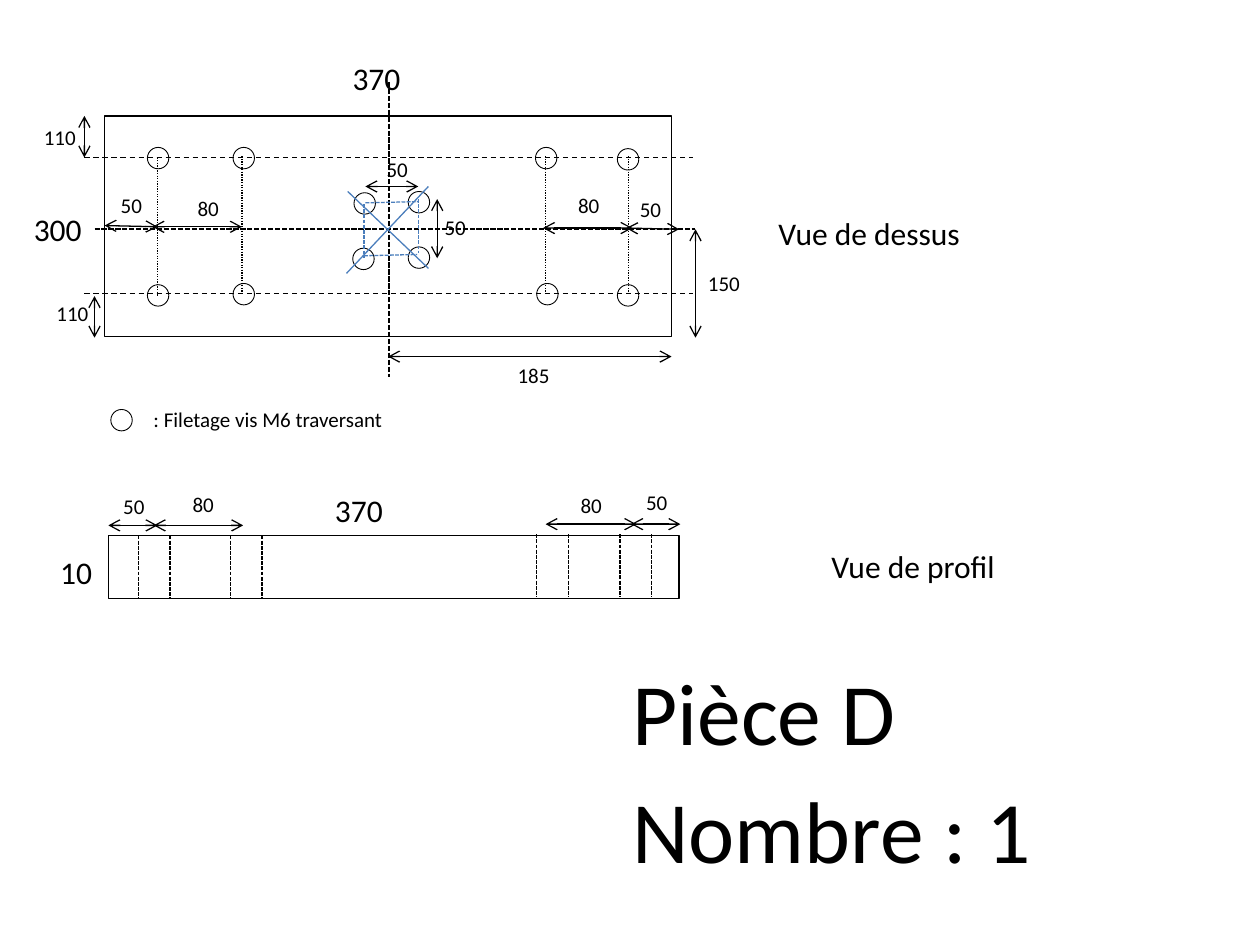
import lxml.etree
import pptx
import pptx.dml.color
import pptx.enum.dml
import pptx.enum.shapes
import pptx.oxml.ns
import pptx.util

Inches = pptx.util.Inches
Pt = pptx.util.Pt
qn = pptx.oxml.ns.qn
Dash = pptx.enum.dml.MSO_LINE
Preset = pptx.enum.shapes.MSO_SHAPE

THEME = {
    "font": "Calibri",
    "ink": pptx.dml.color.RGBColor(0x00, 0x00, 0x00),
    "blue": pptx.dml.color.RGBColor(0x4B, 0x7E, 0xBC),
    "dimension": 12,
    "heading": 18,
    "title": 50,
    "hole_line": 0.5,
    "line": 0.75,
    "centre_line": 1,
}


def draw_line(x1, y1, x2, y2, color="ink", width="line", dash=None, arrows=False):
    connector = slide.shapes.add_connector(
        pptx.enum.shapes.MSO_CONNECTOR.STRAIGHT,
        Inches(x1), Inches(y1), Inches(x2), Inches(y2))
    connector.line.color.rgb = THEME[color]
    connector.line.width = Pt(THEME[width])
    if dash is not None:
        connector.line.dash_style = dash
    if arrows:
        for end in ("a:headEnd", "a:tailEnd"):
            lxml.etree.SubElement(connector.line._get_or_add_ln(), qn(end), type="arrow")
    lxml.etree.SubElement(connector._element.spPr, qn("a:effectLst"))


def draw_outline(preset, left, top, width, height, line_width):
    outline = slide.shapes.add_shape(
        preset, Inches(left), Inches(top), Inches(width), Inches(height))
    outline.shadow.inherit = False
    outline.fill.background()
    outline.line.color.rgb = THEME["ink"]
    outline.line.width = Pt(THEME[line_width])


deck = pptx.Presentation()
deck.slide_width = Inches(10)
deck.slide_height = Inches(7.5)
slide = deck.slides.add_slide(deck.slide_layouts[6])

plate_views = [(0.83, 0.92, 4.5, 1.75), (0.86, 4.25, 4.53, 0.5)]
for left, top, width, height in plate_views:
    draw_outline(Preset.RECTANGLE, left, top, width, height, "line")

for row_y in (1.25, 2.33):
    draw_line(0.67, row_y, 5.5, row_y, dash=Dash.DASH)
draw_line(3.09, 0.65, 3.09, 2.99, width="centre_line", dash=Dash.SQUARE_DOT)
draw_line(0.75, 1.82, 5.52, 1.82, width="centre_line", dash=Dash.SQUARE_DOT)

for column_x, top, bottom in [(1.25, 1.25, 2.35), (1.92, 1.24, 2.33),
                              (4.33, 1.24, 2.33), (4.99, 1.24, 2.33)]:
    draw_line(column_x, top, column_x, bottom, dash=Dash.ROUND_DOT)

outer_holes = [(1.17, 1.17), (1.85, 1.17), (4.25, 1.17), (4.9, 1.18),
               (1.17, 2.26), (1.85, 2.25), (4.26, 2.25), (4.9, 2.26)]
centre_holes = [(2.81, 1.53), (3.24, 1.52), (2.8, 1.97), (3.24, 1.96)]
legend_hole = (0.88, 3.25)
for left, top in outer_holes + centre_holes + [legend_hole]:
    draw_outline(Preset.OVAL, left, top, 0.17, 0.17, "hole_line")

for diagonal in [(3.4, 1.48, 2.75, 2.17), (2.76, 1.52, 3.4, 2.13)]:
    draw_line(*diagonal, color="blue")
for square_side in [(2.89, 1.62, 2.89, 2.05), (3.32, 1.58, 3.32, 2.01),
                    (2.9, 1.61, 3.32, 1.6), (2.89, 2.03, 3.31, 2.02)]:
    draw_line(*square_side, color="blue", dash=Dash.SQUARE_DOT)

for hole_left, top in [(1.1, 4.25), (1.83, 4.25), (4.26, 4.24), (4.92, 4.24)]:
    for edge_x in (hole_left, hole_left + 0.25):
        draw_line(edge_x, top, edge_x, top + 0.5, dash=Dash.SQUARE_DOT)

top_view_dimensions = [
    (0.67, 0.92, 0.67, 1.25), (0.75, 2.35, 0.75, 2.68),
    (0.83, 1.79, 1.25, 1.8), (1.21, 1.8, 1.92, 1.8),
    (4.31, 1.81, 5.02, 1.81), (4.97, 1.81, 5.39, 1.82),
    (3.08, 2.83, 5.33, 2.83), (5.52, 1.82, 5.52, 2.68),
    (2.9, 1.48, 3.32, 1.48), (3.47, 1.58, 3.47, 2.05),
]
profile_dimensions = [
    (0.86, 4.17, 1.25, 4.17), (1.22, 4.17, 1.93, 4.17),
    (4.33, 4.16, 5.05, 4.16), (5.01, 4.16, 5.4, 4.16),
]
for dimension in top_view_dimensions + profile_dimensions:
    draw_line(*dimension, arrows=True)

labels = {
    ("heading", 1, 0.4): [
        ("370", 2.7, 0.42), ("300", 0.17, 1.62), ("370", 2.56, 3.85), ("10", 0.38, 4.34)],
    ("heading", 2.92, 0.4): [("Vue de dessus", 6.08, 1.65), ("Vue de profil", 6.5, 4.29)],
    ("dimension", 0.5, 0.3): [
        ("110", 0.25, 0.94), ("110", 0.35, 2.34),
        ("50", 0.86, 1.48), ("80", 1.47, 1.5), ("80", 4.49, 1.48), ("50", 4.98, 1.51),
        ("185", 4.01, 2.83), ("150", 5.52, 2.1), ("50", 2.97, 1.19), ("50", 3.43, 1.65),
        ("50", 0.88, 3.87), ("80", 1.43, 3.85), ("80", 4.51, 3.86), ("50", 5.03, 3.84)],
    ("dimension", 2.67, 0.3): [(": Filetage vis M6 traversant", 1.12, 3.18)],
    ("title", 4.45, 0.94): [("Pièce D", 4.92, 5.17), ("Nombre : 1", 4.92, 6.11)],
}
for (size, width, height), entries in labels.items():
    for wording, left, top in entries:
        label = slide.shapes.add_textbox(
            Inches(left), Inches(top), Inches(width), Inches(height))
        label.text_frame.word_wrap = True
        label.text_frame.text = wording
        font = label.text_frame.paragraphs[0].runs[0].font
        font.name = THEME["font"]
        font.size = Pt(THEME[size])
        font.color.rgb = THEME["ink"]

deck.save("out.pptx")
